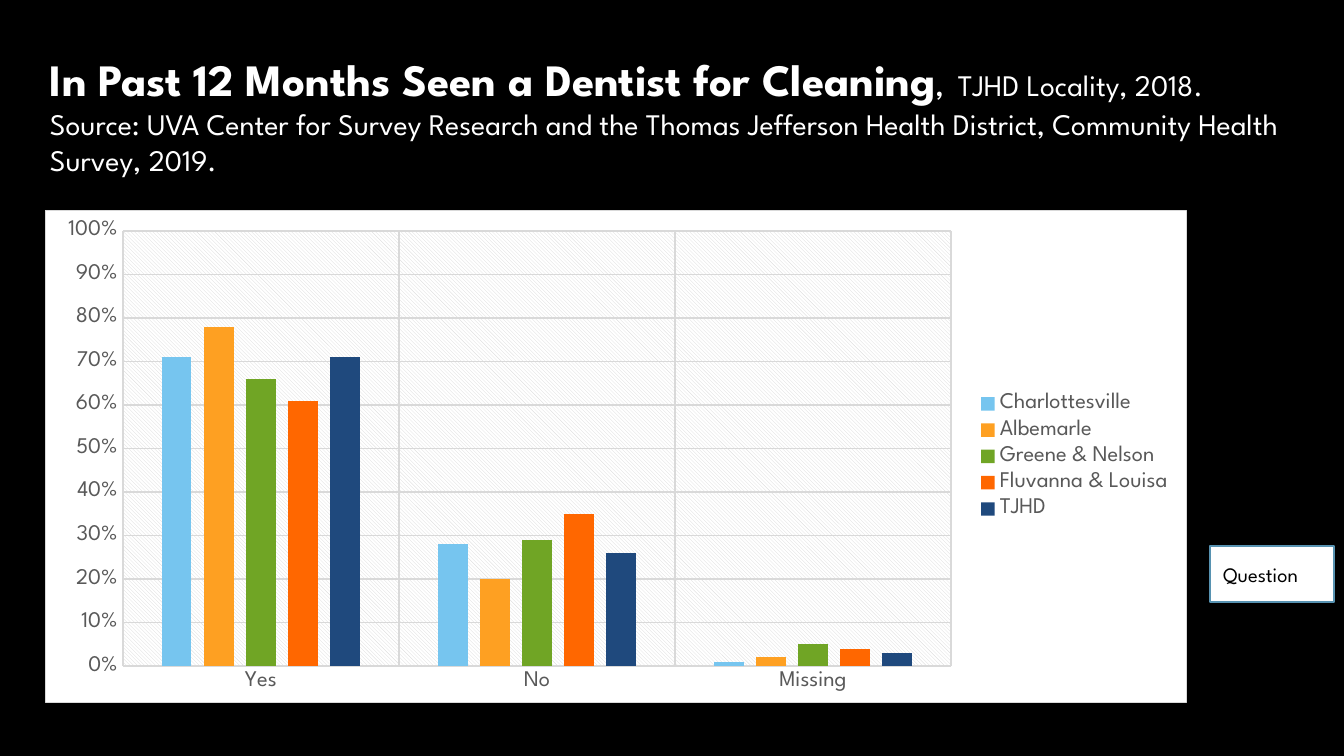
from dataclasses import dataclass

from pptx import Presentation
from pptx import util as u
from pptx.chart import data as chart_data
from pptx.dml.color import RGBColor
from pptx.enum import chart as ce
from pptx.enum import shapes, text
from pptx.oxml import ns, parse_xml

EMU_PER_PX = 914400 / 134.4


@dataclass(frozen=True)
class Theme:
    font: str = "League Spartan"
    black: str = "000000"
    white: str = "FFFFFF"
    grid: str = "D9D9D9"
    label: str = "595959"
    button_line: str = "5792B1"
    title_size: int = 24
    comma_size: int = 14
    source_size: int = 16
    chart_size: int = 12
    button_size: int = 11


@dataclass(frozen=True)
class Box:
    left: int
    top: int
    width: int
    height: int

    def emu(self) -> tuple:
        return tuple(px(n) for n in (self.left, self.top, self.width, self.height))


@dataclass(frozen=True)
class Locality:
    name: str
    shares: tuple
    color: str


THEME = Theme()
ANSWERS = ("Yes", "No", "Missing")
LOCALITIES = (
    Locality("Charlottesville", (0.71, 0.28, 0.01), "76C5EF"),
    Locality("Albemarle", (0.78, 0.20, 0.02), "FEA022"),
    Locality("Greene & Nelson", (0.66, 0.29, 0.05), "70A525"),
    Locality("Fluvanna & Louisa", (0.61, 0.35, 0.04), "FF6700"),
    Locality("TJHD", (0.71, 0.26, 0.03), "1F497D"),
)


def px(length: int) -> u.Emu:
    return u.Emu(round(length * EMU_PER_PX))


def rgb(color: str) -> RGBColor:
    return RGBColor.from_string(color)


def set_font(font, size: int, color: str, bold: bool = False) -> None:
    font.name, font.size, font.bold = THEME.font, u.Pt(size), bold
    font.color.rgb = rgb(color)


def add_text(paragraph, wording: str, *, size: int, color: str, bold: bool = False) -> None:
    run = paragraph.add_run()
    run.text = wording
    set_font(run.font, size, color, bold)


def set_line(line, color: str, width: float = 0.75) -> None:
    line.color.rgb = rgb(color)
    line.width = u.Pt(width)


def add_panel(slide, kind, box: Box, fill: str, line: str | None = None):
    panel = slide.shapes.add_shape(kind, *box.emu())
    panel.shadow.inherit = False
    panel.fill.solid()
    panel.fill.fore_color.rgb = rgb(fill)
    if line:
        set_line(panel.line, line, 1)
    else:
        panel.line.fill.background()
    return panel


def add_title(slide) -> None:
    panel = add_panel(slide, shapes.MSO_SHAPE.RECTANGLE, Box(45, 47, 1254, 186), THEME.black)
    frame = panel.text_frame
    frame.word_wrap = True
    frame.vertical_anchor = text.MSO_ANCHOR.TOP
    frame.margin_left = frame.margin_right = frame.margin_top = frame.margin_bottom = px(5)
    heading = frame.paragraphs[0]
    heading.alignment = text.PP_ALIGN.LEFT
    add_text(heading, "In Past 12 Months Seen a Dentist for Cleaning",
             size=THEME.title_size, color=THEME.white, bold=True)
    add_text(heading, ", ", size=THEME.comma_size, color=THEME.white, bold=True)
    add_text(heading, " TJHD Locality, 2018. Source: UVA Center for Survey Research and the "
             "Thomas Jefferson Health District, Community Health Survey, 2019.",
             size=THEME.source_size, color=THEME.white)


def area_format(fill: str, line: str):
    """Return the chart XML for the fill and border of an area."""
    return parse_xml(f'<c:spPr {ns.nsdecls("c", "a")}>{fill}{line}</c:spPr>')


def fill_areas(chart) -> None:
    """Give the chart a white, bordered ground and the plot a light diagonal hatch."""
    white, grid = (f'<a:srgbClr val="{c}"/>' for c in (THEME.white, THEME.grid))
    hatch = (f'<a:pattFill prst="ltDnDiag"><a:fgClr>{grid}</a:fgClr>'
             f'<a:bgClr>{white}</a:bgClr></a:pattFill>')
    border = f'<a:ln w="9525"><a:solidFill>{grid}</a:solidFill></a:ln>'
    root = chart.element.find(ns.qn("c:chart"))
    root.find(ns.qn("c:plotArea")).append(area_format(hatch, "<a:ln><a:noFill/></a:ln>"))
    root.addnext(area_format(f"<a:solidFill>{white}</a:solidFill>", border))


def format_axis(axis) -> None:
    axis.major_tick_mark = axis.minor_tick_mark = ce.XL_TICK_MARK.NONE
    axis.has_major_gridlines = True
    set_line(axis.major_gridlines.format.line, THEME.grid)
    set_font(axis.tick_labels.font, THEME.chart_size, THEME.label)


def add_locality_chart(slide, box: Box) -> None:
    shares = chart_data.CategoryChartData(number_format="0%")
    shares.categories = ANSWERS
    for locality in LOCALITIES:
        shares.add_series(locality.name, locality.shares)
    chart = slide.shapes.add_chart(
        ce.XL_CHART_TYPE.COLUMN_CLUSTERED, *box.emu(), shares).chart
    chart.has_title = False
    set_font(chart.font, THEME.chart_size, THEME.label)

    columns = chart.plots[0]
    columns.gap_width, columns.overlap = 267, -43
    columns.vary_by_categories = False
    for series, locality in zip(columns.series, LOCALITIES):
        series.format.fill.solid()
        series.format.fill.fore_color.rgb = rgb(locality.color)

    answers, percent = chart.category_axis, chart.value_axis
    format_axis(answers)
    format_axis(percent)
    set_line(answers.format.line, THEME.grid)
    percent.format.line.fill.background()
    percent.minimum_scale, percent.maximum_scale, percent.major_unit = 0, 1, 0.1
    percent.tick_labels.number_format = "0%"
    percent.tick_labels.number_format_is_linked = False

    chart.has_legend = True
    chart.legend.position = ce.XL_LEGEND_POSITION.RIGHT
    chart.legend.include_in_layout = False
    set_font(chart.legend.font, THEME.chart_size, THEME.label)
    fill_areas(chart)


def add_question_button(slide) -> None:
    add_panel(slide, shapes.MSO_SHAPE.ACTION_BUTTON_CUSTOM, Box(1210, 546, 124, 56),
              THEME.white, THEME.button_line)
    caption = slide.shapes.add_textbox(*Box(1210, 555, 134, 39).emu()).text_frame
    caption.word_wrap = True
    add_text(caption.paragraphs[0], "Question", size=THEME.button_size, color=THEME.black)


def main() -> None:
    deck = Presentation()
    deck.slide_width, deck.slide_height = px(1344), px(756)
    slide = deck.slides.add_slide(deck.slide_layouts[6])
    slide.background.fill.solid()
    slide.background.fill.fore_color.rgb = rgb(THEME.black)
    add_title(slide)
    add_locality_chart(slide, Box(45, 210, 1142, 493))
    add_question_button(slide)
    deck.save("out.pptx")


if __name__ == "__main__":
    main()
